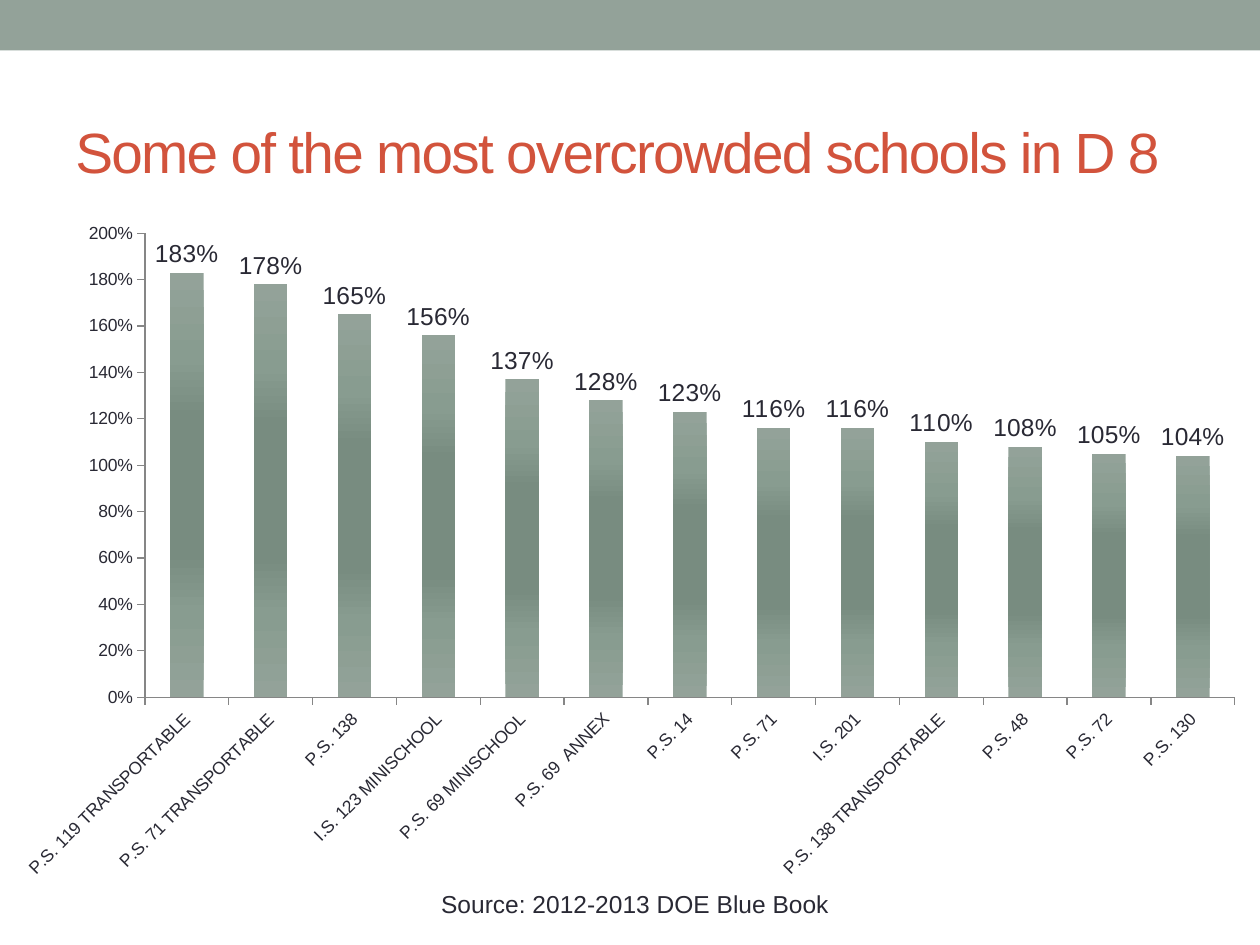
from dataclasses import dataclass

from lxml import etree
from pptx import Presentation
from pptx.chart.data import CategoryChartData
from pptx.dml.color import RGBColor
from pptx.enum.chart import XL_CHART_TYPE, XL_LABEL_POSITION, XL_TICK_MARK
from pptx.enum.shapes import MSO_SHAPE
from pptx.enum.text import MSO_ANCHOR, PP_ALIGN
from pptx.oxml import parse_xml
from pptx.oxml.ns import nsdecls, qn
from pptx.util import Pt

COLUMNS = XL_CHART_TYPE.COLUMN_CLUSTERED
OUTSIDE_END = XL_LABEL_POSITION.OUTSIDE_END
TICK_OUT, TICK_NONE = XL_TICK_MARK.OUTSIDE, XL_TICK_MARK.NONE
RECTANGLE = MSO_SHAPE.RECTANGLE
MIDDLE, TOP = MSO_ANCHOR.MIDDLE, MSO_ANCHOR.TOP
LEFT, CENTER = PP_ALIGN.LEFT, PP_ALIGN.CENTER


@dataclass(frozen=True)
class Theme:
    font: str = "Arial"
    sage: str = "93A299"
    sage_mid: str = "889C90"
    sage_dark: str = "788C80"
    title: str = "D2533C"
    ink: str = "292934"
    axis: str = "868686"
    title_size: float = 32.4
    body_size: float = 14
    axis_size: float = 10


SCHOOLS = {
    "P.S. 119 TRANSPORTABLE": 1.83,
    "P.S. 71 TRANSPORTABLE": 1.78,
    "P.S. 138": 1.65,
    "I.S. 123 MINISCHOOL": 1.56,
    "P.S. 69 MINISCHOOL": 1.37,
    "P.S. 69  ANNEX": 1.28,
    "P.S. 14": 1.23,
    "P.S. 71": 1.16,
    "I.S. 201": 1.16,
    "P.S. 138 TRANSPORTABLE": 1.10,
    "P.S. 48": 1.08,
    "P.S. 72": 1.05,
    "P.S. 130": 1.04,
}


def assign(target, values):
    for name, value in values.items():
        setattr(target, name, value)


class SlideBuilder:
    """Draws themed elements on the current slide."""

    def __init__(self, page, theme):
        self.page = page
        self.theme = theme

    def style_font(self, font, size, color):
        assign(font, {"name": self.theme.font, "size": Pt(size), "bold": False})
        font.color.rgb = RGBColor.from_string(color)

    def band(self, frame, color):
        box = self.page.shapes.add_shape(RECTANGLE, *map(Pt, frame))
        box.shadow.inherit = False
        box.fill.solid()
        box.fill.fore_color.rgb = RGBColor.from_string(color)
        box.line.fill.background()

    def text(self, frame, words, size, color, align=LEFT, anchor=TOP, spacing=0):
        box = self.page.shapes.add_textbox(*map(Pt, frame))
        assign(box.text_frame, {"word_wrap": True, "vertical_anchor": anchor})
        para = box.text_frame.paragraphs[0]
        para.alignment = align
        span = para.add_run()
        span.text = words
        self.style_font(span.font, size, color)
        if spacing:
            span.font._element.set("spc", str(spacing * 100))

    def column_chart(self, frame, values, plot_area):
        data = CategoryChartData(number_format="0%")
        data.categories = list(values)
        data.add_series("Series 1", list(values.values()))
        chart = self.page.shapes.add_chart(COLUMNS, *map(Pt, frame), data).chart
        assign(chart, {"has_legend": False, "has_title": False})
        self.style_font(chart.font, self.theme.axis_size, self.theme.ink)
        self.place_plot(chart, plot_area)

        for axis in (chart.category_axis, chart.value_axis):
            assign(axis, {
                "has_major_gridlines": False,
                "major_tick_mark": TICK_OUT,
                "minor_tick_mark": TICK_NONE,
            })
            axis.format.line.color.rgb = RGBColor.from_string(self.theme.axis)
            axis.format.line.width = Pt(0.75)
            self.style_font(axis.tick_labels.font, self.theme.axis_size, self.theme.ink)
        assign(chart.value_axis, {"minimum_scale": 0, "maximum_scale": 2, "major_unit": 0.2})
        assign(chart.value_axis.tick_labels, {"number_format": "0%", "number_format_is_linked": False})
        label_body = chart.category_axis._element.find(qn("c:txPr")).find(qn("a:bodyPr"))
        label_body.set("rot", str(-45 * 60000))

        plot = chart.plots[0]
        assign(plot, {"gap_width": 150, "vary_by_categories": False, "has_data_labels": True})
        assign(plot.data_labels, {
            "show_value": True,
            "number_format": "0%",
            "number_format_is_linked": False,
            "position": OUTSIDE_END,
        })
        self.style_font(plot.data_labels.font, self.theme.body_size, self.theme.ink)
        self.shade(plot.series[0].format.fill)

    def place_plot(self, chart, plot_area):
        area = chart._chartSpace.chart.plotArea
        for old in area.findall(qn("c:layout")):
            area.remove(old)
        layout = etree.Element(qn("c:layout"))
        manual = etree.SubElement(layout, qn("c:manualLayout"))
        settings = {"layoutTarget": "inner", "xMode": "edge", "yMode": "edge"}
        settings.update(zip("xywh", plot_area))
        for name, value in settings.items():
            etree.SubElement(manual, qn(f"c:{name}")).set("val", str(value))
        area.insert(0, layout)

    def shade(self, fill):
        fill.gradient()
        fill.gradient_angle = 90
        theme = self.theme
        stops = {
            0: theme.sage, 20: theme.sage_mid, 34: theme.sage_dark,
            66: theme.sage_dark, 80: theme.sage_mid, 100: theme.sage,
        }
        stop_list = fill._fill._gradFill.find(qn("a:gsLst"))
        for old in list(stop_list):
            stop_list.remove(old)
        for percent, color in stops.items():
            stop_list.append(parse_xml(
                f'<a:gs {nsdecls("a")} pos="{percent * 1000}"><a:srgbClr val="{color}"/></a:gs>'
            ))


def main():
    deck = Presentation()
    assign(deck, {"slide_width": Pt(720), "slide_height": Pt(540)})
    theme = Theme()
    slide = SlideBuilder(deck.slides.add_slide(deck.slide_layouts[6]), theme)
    slide.band((0, 0, 720, 28.8), theme.sage)
    slide.text((36, 47, 648, 78), "Some of the most overcrowded schools in D 8",
               theme.title_size, theme.title, anchor=MIDDLE, spacing=-1)
    slide.column_chart((0, 120, 720, 390), SCHOOLS, (0.115, 0.034, 0.865, 0.68))
    slide.text((21.6, 504.7, 682.6, 24.5), "Source: 2012-2013 DOE Blue Book",
               theme.body_size, theme.ink, align=CENTER)
    deck.save("out.pptx")


if __name__ == "__main__":
    main()
